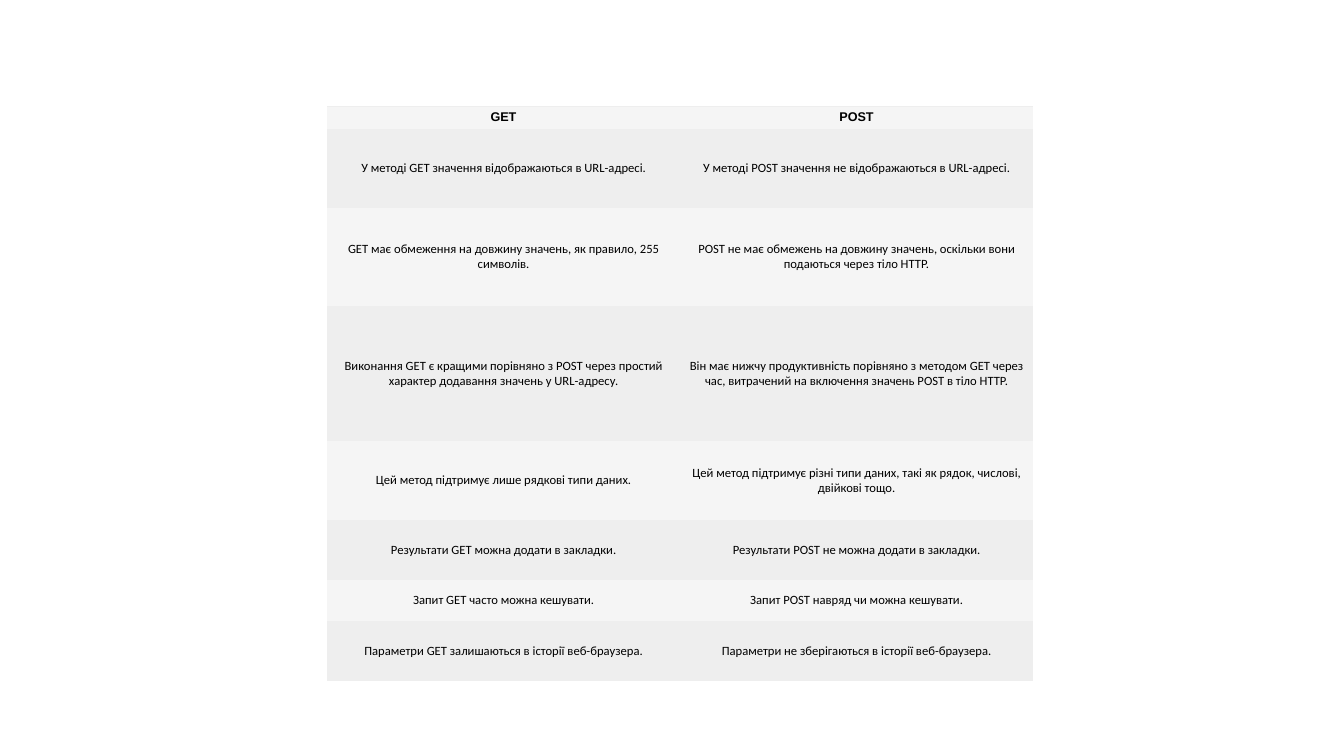
from lxml.etree import SubElement
from pptx import Presentation
from pptx.dml.color import RGBColor
from pptx.enum.text import MSO_ANCHOR, PP_ALIGN
from pptx.oxml.ns import qn
from pptx.util import Pt

# Content: row height in px, GET text, POST text
ROWS = [
    (23, "GET", "POST"),
    (79, "У методі GET значення відображаються в URL-адресі.",
     "У методі POST значення не відображаються в URL-адресі."),
    (98, "GET має обмеження на довжину значень, як правило, 255 символів.",
     "POST не має обмежень на довжину значень, оскільки вони подаються через тіло HTTP."),
    (135, "Виконання GET є кращими порівняно з POST через простий характер додавання значень у URL-адресу.",
     "Він має нижчу продуктивність порівняно з методом GET через час, витрачений на включення значень POST в тіло HTTP."),
    (79, "Цей метод підтримує лише рядкові типи даних.",
     "Цей метод підтримує різні типи даних, такі як рядок, числові, двійкові тощо."),
    (60, "Результати GET можна додати в закладки.",
     "Результати POST не можна додати в закладки."),
    (41, "Запит GET часто можна кешувати.",
     "Запит POST навряд чи можна кешувати."),
    (60, "Параметри GET залишаються в історії веб-браузера.",
     "Параметри не зберігаються в історії веб-браузера."),
]
COLORS = {"light": "F5F5F5", "dark": "EEEEEE", "text": "000000"}
LEFT, TOP, COL_W, INSET = 327, 106, 353, 2


def px(n):
    return round(n * 914400 / 100.8)


def set_borders(cell, ruled):
    """Draw thin rules on the sides named in ruled and clear the others."""
    tc_pr = cell._tc.get_or_add_tcPr()
    for side in "LRTB":
        ln = SubElement(tc_pr, qn(f"a:ln{side}"), w=str(Pt(0.5)))
        if side in ruled:
            fill = SubElement(ln, qn("a:solidFill"))
            SubElement(fill, qn("a:srgbClr"), val=COLORS["dark"])
        else:
            SubElement(ln, qn("a:noFill"))


def write(cell, text, font="Calibri", size=9, bold=False):
    cell.vertical_anchor = MSO_ANCHOR.MIDDLE
    cell.margin_left = cell.margin_right = px(INSET)
    cell.margin_top = cell.margin_bottom = px(INSET)
    p = cell.text_frame.paragraphs[0]
    p.alignment = PP_ALIGN.CENTER
    r = p.add_run()
    r.text = text
    r.font.name, r.font.size, r.font.bold = font, Pt(size), bold
    r.font.color.rgb = RGBColor.from_string(COLORS["text"])


def main():
    prs = Presentation()
    prs.slide_width, prs.slide_height = px(1344), px(756)
    s = prs.slides.add_slide(prs.slide_layouts[6])

    # Comparison table
    height = sum(row[0] for row in ROWS)
    table = s.shapes.add_table(len(ROWS), 2, px(LEFT), px(TOP),
                               px(2 * COL_W), px(height)).table
    table.first_row = table.horz_banding = False
    for col in table.columns:
        col.width = px(COL_W)

    # Cells: header, then alternating bands
    for i, (row_h, *texts) in enumerate(ROWS):
        table.rows[i].height = px(row_h)
        header, last = i == 0, i == len(ROWS) - 1
        ruled = "TB" if header else "T" if i == 1 else "B" if last else ""
        for j, text in enumerate(texts):
            cell = table.cell(i, j)
            set_borders(cell, ruled)
            cell.fill.solid()
            band = COLORS["dark" if i % 2 else "light"]
            cell.fill.fore_color.rgb = RGBColor.from_string(band)
            write(cell, text, font="Arial" if header else "Calibri", bold=header)

    prs.save("out.pptx")


if __name__ == "__main__":
    main()
